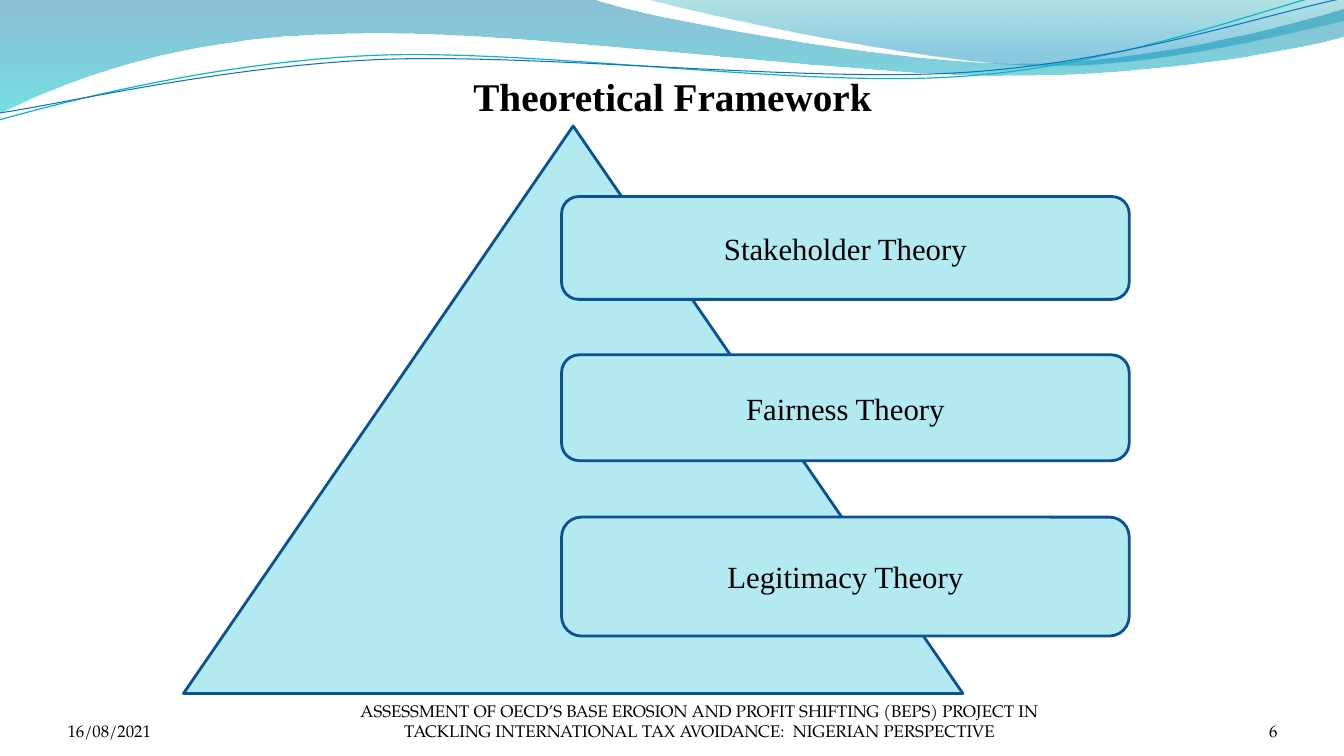
from lxml.etree import SubElement
from pptx import Presentation
from pptx.dml.color import RGBColor
from pptx.enum.shapes import MSO_SHAPE
from pptx.enum.text import MSO_ANCHOR, PP_ALIGN
from pptx.oxml.ns import qn
from pptx.util import Inches, Pt

# Content
TITLE = "Theoretical Framework"
THEORIES = [  # text, top, height
    ("Stakeholder Theory", 1.95, 1.02),
    ("Fairness Theory", 3.52, 1.05),
    ("Legitimacy Theory", 5.13, 1.18),
]
FOOTERS = [  # text, left, width, alignment
    ("6", 11.56, 1.11, PP_ALIGN.RIGHT),
    ("ASSESSMENT OF OECD’S BASE EROSION AND PROFIT SHIFTING (BEPS) PROJECT IN "
     "TACKLING INTERNATIONAL TAX AVOIDANCE:  NIGERIAN PERSPECTIVE", 3.23, 7.42, PP_ALIGN.CENTER),
    ("16/08/2021", 0.67, 3.11, PP_ALIGN.LEFT),
]

# Outlines: a pair is a straight step, a six-tuple is a Bézier curve
WAVES = [  # outline, gradient stops (position, colour, opacity in percent)
    ([(0, 0), (5.87, -0.01), (6.34, 0.17, 8.85, 0.63, 10.11, 0.63),
      (11.38, 0.63, 12.78, 0.26, 13.33, 0.09), (13.35, 0.36),
      (13.11, 0.44, 11.6, 0.76, 9.94, 0.75), (8.29, 0.75, 5.09, 0.28, 3.43, 0.34),
      (1.72, 0.36, 0.61, 0.83, -0.01, 1.13)],
     [(0, "0074A1", 45), (1, "00C6CF", 55)]),
    ([(6.39, -0.01), (6.79, 0.11, 9.09, 0.62, 10.25, 0.65),
      (11.41, 0.69, 12.82, 0.32, 13.33, 0.21), (13.33, 0)],
     [(0, "00A1A9", 30), (0.8, "008BBF", 45)]),
]
RIPPLES = [  # outline, colour, line width
    ([(-0.01, 1.19), (0.64, 1.01, 2.11, 0.62, 3.69, 0.55), (5.27, 0.48, 7.9, 0.87, 9.5, 0.76),
      (11.1, 0.66, 12.52, 0.08, 13.31, -0.1)], "0AB8BF", 0.85),
    ([(0, 1.12), (0.63, 1.03, 2.18, 0.66, 3.78, 0.59), (5.37, 0.53, 7.96, 0.82, 9.55, 0.72),
      (11.15, 0.62, 12.55, 0.14, 13.34, -0.02)], "0F6FC6", 0.75),
]


class Theme:
    text = "000000"
    panel = "B3EAF2"
    outline = "0B5292"
    outline_width = 2
    heading_font = "Times New Roman"
    footer_font = "TeX Gyre Pagella"
    title_size, theory_size, footer_size = 28, 22, 12


def write_text(shape, text, *, size, font=Theme.heading_font, bold=False,
               align=PP_ALIGN.CENTER, anchor=MSO_ANCHOR.MIDDLE, margins=None):
    frame = shape.text_frame
    frame.word_wrap = True
    frame.vertical_anchor = anchor
    if margins:
        (frame.margin_left, frame.margin_top,
         frame.margin_right, frame.margin_bottom) = map(Inches, margins)
    paragraph = frame.paragraphs[0]
    paragraph.alignment = align
    run = paragraph.add_run()
    run.text = text
    run.font.size, run.font.name, run.font.bold = Pt(size), font, bold
    run.font.color.rgb = RGBColor.from_string(Theme.text)


def set_line(shape, colour, width):
    shape.line.color.rgb = RGBColor.from_string(colour)
    shape.line.width = Pt(width)


def add_panel(slide, kind, left, top, width, height):
    shape = slide.shapes.add_shape(kind, *map(Inches, (left, top, width, height)))
    shape.shadow.inherit = False
    shape.fill.solid()
    shape.fill.fore_color.rgb = RGBColor.from_string(Theme.panel)
    set_line(shape, Theme.outline, Theme.outline_width)
    return shape


def add_outline(slide, outline, close):
    """Draw the end points, then bend the curved steps."""
    ends = [(Inches(part[-2]), Inches(part[-1])) for part in outline]
    builder = slide.shapes.build_freeform(*ends[0])
    builder.add_line_segments(ends[1:], close=close)
    shape = builder.convert_to_shape()
    shape.shadow.inherit = False
    steps = next(shape._element.spPr.iter(qn("a:path")))
    for index, part in enumerate(outline):
        if len(part) == 6:
            curve = SubElement(steps, qn("a:cubicBezTo"))
            for x, y in zip(part[::2], part[1::2]):
                point = SubElement(curve, qn("a:pt"))
                point.set("x", str(Inches(x) - shape.left))
                point.set("y", str(Inches(y) - shape.top))
            steps.replace(steps[index], curve)
    return shape


def add_wave(slide, outline, stops):
    wave = add_outline(slide, outline, close=True)
    wave.line.fill.background()
    wave.fill.gradient()
    wave.fill.gradient_angle = 270
    for stop, (position, colour, _) in zip(wave.fill.gradient_stops, stops):
        stop.position = position
        stop.color.rgb = RGBColor.from_string(colour)
    colours = wave._element.spPr.iter(qn("a:srgbClr"))
    for element, (_, _, opacity) in zip(colours, stops):
        SubElement(element, qn("a:alpha")).set("val", str(opacity * 1000))


def main():
    presentation = Presentation()
    presentation.slide_width, presentation.slide_height = Inches(13.33), Inches(7.5)
    slide = presentation.slides.add_slide(presentation.slide_layouts[5])

    # Waves and ripples along the top
    for outline, stops in WAVES:
        add_wave(slide, outline, stops)
    for outline, colour, width in RIPPLES:
        ripple = add_outline(slide, outline, close=False)
        ripple.fill.background()
        set_line(ripple, colour, width)

    # Title
    title = slide.shapes.title
    title.left, title.top, title.width, title.height = map(Inches, (2.17, 0.55, 9, 0.63))
    write_text(title, TITLE, size=Theme.title_size, bold=True,
               anchor=MSO_ANCHOR.BOTTOM, margins=(0, 0.05, 0, 0))

    # Page number, footer and date
    for text, left, width, align in FOOTERS:
        box = slide.shapes.add_textbox(*map(Inches, (left, 6.95, width, 0.4)))
        write_text(box, text, size=Theme.footer_size, font=Theme.footer_font,
                   align=align, anchor=MSO_ANCHOR.BOTTOM, margins=(0, 0, 0, 0))

    # Pyramid with the theories
    add_panel(slide, MSO_SHAPE.ISOSCELES_TRIANGLE, 1.82, 1.25, 7.73, 5.63)
    for text, top, height in THEORIES:
        panel = add_panel(slide, MSO_SHAPE.ROUNDED_RECTANGLE, 5.57, top, 5.63, height)
        write_text(panel, text, size=Theme.theory_size)

    presentation.save("out.pptx")


if __name__ == "__main__":
    main()
